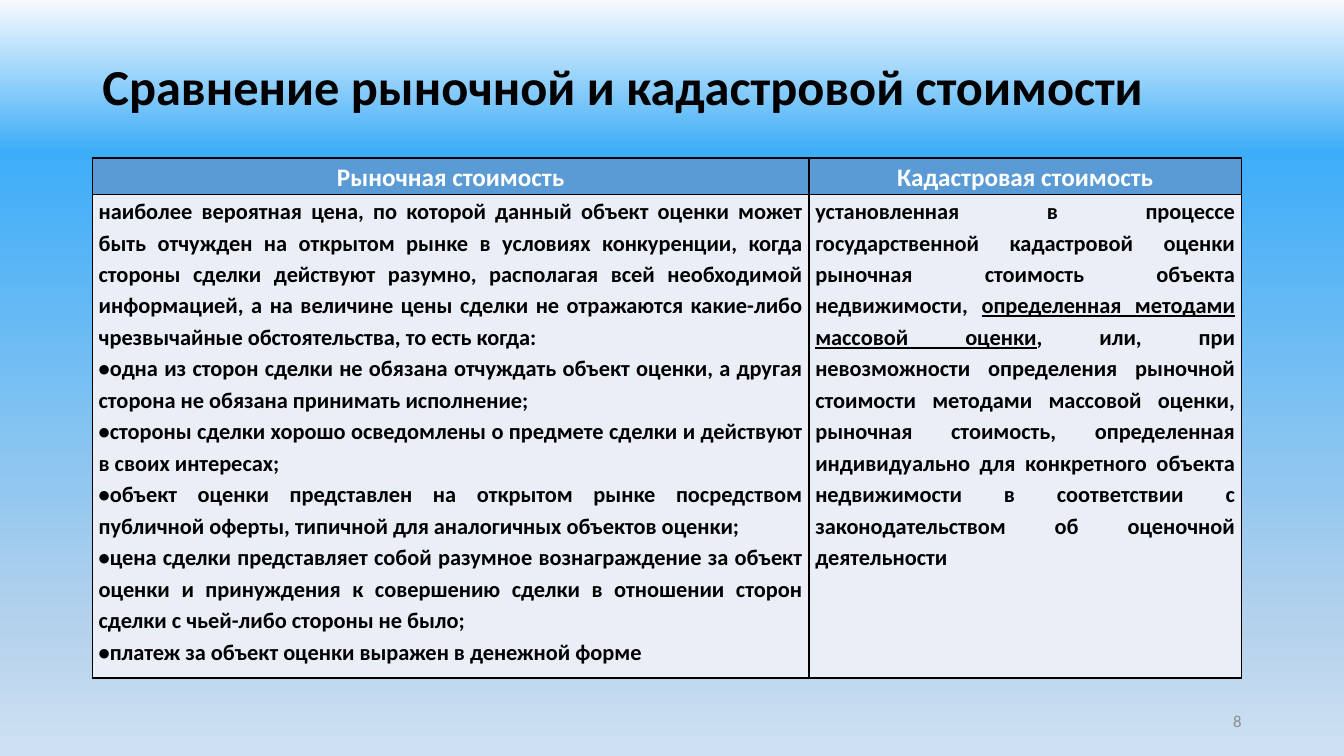
import dataclasses

import pptx
import pptx.dml.color
import pptx.enum.text
import pptx.oxml
import pptx.oxml.ns
import pptx.util

Pt = pptx.util.Pt
Align = pptx.enum.text.PP_ALIGN
Anchor = pptx.enum.text.MSO_ANCHOR
FONT = "Calibri"
BLACK, WHITE, GREY = "000000", "FFFFFF", "8C8C8C"
HEADER_FILL, BODY_FILL = "5B9BD5", "EAEFF7"
BACKGROUND_STOPS = [(0, "F7FAFD"), (20, "3EADF8"), (83, "B5D2EC"), (100, "CEE1F2")]
ROW_HEIGHTS = [25.9, 345.6]


@dataclasses.dataclass
class Span:
    text: str
    underline: bool = False


@dataclasses.dataclass
class Column:
    heading: str
    width: float
    paragraphs: list[list[Span]]


COLUMNS = [
    Column("Рыночная стоимость", 511.9, [
        [Span("наиболее вероятная цена, по которой данный объект оценки может быть отчужден "
              "на открытом рынке в условиях конкуренции, когда стороны сделки действуют разумно, "
              "располагая всей необходимой информацией, а на величине цены сделки не отражаются "
              "какие-либо чрезвычайные обстоятельства, то есть когда:")],
        [Span("•одна из сторон сделки не обязана отчуждать объект оценки, а другая сторона "
              "не обязана принимать исполнение;")],
        [Span("•стороны сделки хорошо осведомлены о предмете сделки и действуют в своих интересах;")],
        [Span("•объект оценки представлен на открытом рынке посредством публичной оферты, "
              "типичной для аналогичных объектов оценки;")],
        [Span("•цена сделки представляет собой разумное вознаграждение за объект оценки "
              "и принуждения к совершению сделки в отношении сторон сделки с чьей-либо "
              "стороны не было;")],
        [Span("•платеж за объект оценки выражен в денежной форме")],
    ]),
    Column("Кадастровая стоимость", 308.9, [
        [Span("установленная в процессе государственной кадастровой оценки рыночная стоимость "
              "объекта недвижимости, "),
         Span("определенная методами массовой оценки", underline=True),
         Span(", или, при невозможности определения рыночной стоимости методами массовой оценки, "
              "рыночная стоимость, определенная индивидуально для конкретного объекта "
              "недвижимости в соответствии с законодательством об оценочной деятельности")],
    ]),
]


def rgb(value: str) -> pptx.dml.color.RGBColor:
    return pptx.dml.color.RGBColor.from_string(value)


def write(frame, paragraphs: list[list[Span]], *, size: float, color: str = BLACK,
          bold: bool = True, align=Align.LEFT, spacing: float = 1.0) -> None:
    frame.word_wrap = True
    for index, spans in enumerate(paragraphs):
        para = frame.add_paragraph() if index else frame.paragraphs[0]
        para.alignment = align
        para.line_spacing = spacing
        for span in spans:
            run = para.add_run()
            run.text = span.text
            run.font.name = FONT
            run.font.size = Pt(size)
            run.font.bold = bold
            run.font.underline = span.underline
            run.font.color.rgb = rgb(color)


def paint_background(slide) -> None:
    fill = slide.background.fill
    fill.gradient()
    fill.gradient_angle = 270
    stops = slide.element.find(".//" + pptx.oxml.ns.qn("a:gsLst"))
    for stop in list(stops):
        stops.remove(stop)
    for percent, color in BACKGROUND_STOPS:
        stops.append(pptx.oxml.parse_xml(
            f'<a:gs {pptx.oxml.ns.nsdecls("a")} pos="{percent * 1000}">'
            f'<a:srgbClr val="{color}"/></a:gs>'))


def add_borders(cell) -> None:
    properties = cell._tc.get_or_add_tcPr()
    for index, side in enumerate("LRTB"):
        properties.insert(index, pptx.oxml.parse_xml(
            f'<a:ln{side} {pptx.oxml.ns.nsdecls("a")} w="{Pt(1)}">'
            f'<a:solidFill><a:srgbClr val="{BLACK}"/></a:solidFill></a:ln{side}>'))


def fill_cell(cell, paragraphs: list[list[Span]], fill: str, **text_format) -> None:
    cell.margin_left = cell.margin_right = Pt(4.5)
    cell.margin_top = cell.margin_bottom = Pt(0)
    cell.fill.solid()
    cell.fill.fore_color.rgb = rgb(fill)
    add_borders(cell)
    write(cell.text_frame, paragraphs, spacing=1.15, **text_format)


def add_comparison(slide) -> None:
    width = sum(column.width for column in COLUMNS)
    table = slide.shapes.add_table(len(ROW_HEIGHTS), len(COLUMNS), Pt(66), Pt(112.8),
                                   Pt(width), Pt(sum(ROW_HEIGHTS))).table
    table.horz_banding = False
    for row, height in zip(table.rows, ROW_HEIGHTS):
        row.height = Pt(height)
    for index, column in enumerate(COLUMNS):
        table.columns[index].width = Pt(column.width)
        fill_cell(table.cell(0, index), [[Span(column.heading)]], HEADER_FILL,
                  size=18, color=WHITE, align=Align.CENTER)
        fill_cell(table.cell(1, index), column.paragraphs, BODY_FILL,
                  size=16, align=Align.JUSTIFY)


def add_title(slide) -> None:
    title = slide.shapes.title
    title.left, title.top, title.width, title.height = Pt(66), Pt(28.8), Pt(828), Pt(69.8)
    frame = title.text_frame
    frame.auto_size = pptx.enum.text.MSO_AUTO_SIZE.NONE
    frame.vertical_anchor = Anchor.MIDDLE
    write(frame, [[Span("Сравнение рыночной и кадастровой стоимости")]], size=36, spacing=0.9)


def add_page_number(slide) -> None:
    box = slide.shapes.add_textbox(Pt(678), Pt(500.5), Pt(216), Pt(28.8))
    box.text_frame.vertical_anchor = Anchor.MIDDLE
    write(box.text_frame, [[Span("8")]], size=12, color=GREY, bold=False, align=Align.RIGHT)


def main() -> None:
    deck = pptx.Presentation()
    deck.slide_width, deck.slide_height = Pt(960), Pt(540)
    slide = deck.slides.add_slide(deck.slide_layouts.get_by_name("Title Only"))
    paint_background(slide)
    add_title(slide)
    add_comparison(slide)
    add_page_number(slide)
    deck.save("out.pptx")


if __name__ == "__main__":
    main()
